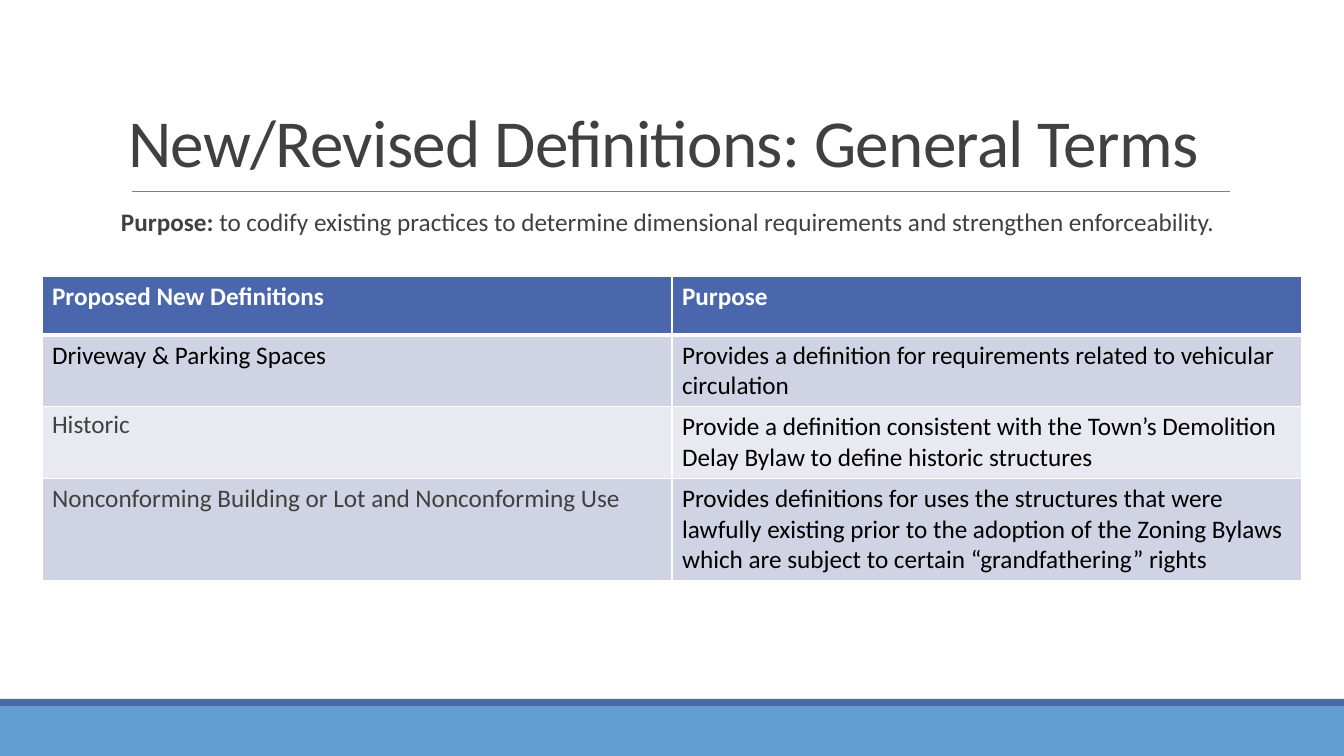
from lxml.etree import SubElement
from pptx import Presentation
from pptx.dml.color import RGBColor
from pptx.enum.shapes import MSO_CONNECTOR, MSO_SHAPE
from pptx.enum.text import MSO_ANCHOR, MSO_AUTO_SIZE, PP_ALIGN
from pptx.oxml.ns import qn
from pptx.util import Pt

TITLE = "New/Revised Definitions: General Terms"
PURPOSE = [
    ("Purpose: ", True),
    ("to codify existing practices to determine dimensional requirements "
     "and strengthen enforceability.", False),
]
DEFINITIONS = [
    ("Proposed New Definitions", "Purpose"),
    ("Driveway & Parking Spaces",
     "Provides a definition for requirements related to vehicular circulation"),
    ("Historic",
     "Provide a definition consistent with the Town’s Demolition Delay Bylaw "
     "to define historic structures"),
    ("Nonconforming Building or Lot and Nonconforming Use",
     "Provides definitions for uses the structures that were lawfully existing "
     "prior to the adoption of the Zoning Bylaws which are subject to certain "
     "“grandfathering” rights"),
]
ROW_HEIGHTS = [59, 71, 71, 102]

WHITE = RGBColor(0xFF, 0xFF, 0xFF)
BLACK = RGBColor(0x00, 0x00, 0x00)
CHARCOAL = RGBColor(0x40, 0x40, 0x40)
GRAY = RGBColor(0x80, 0x80, 0x80)
NAVY = RGBColor(0x4A, 0x66, 0xAC)
SKY = RGBColor(0x62, 0x9D, 0xD1)
BAND_DARK = RGBColor(0xD0, 0xD3, 0xE3)
BAND_LIGHT = RGBColor(0xE9, 0xEA, 0xF1)
TEXT_COLORS = [(WHITE, WHITE), (BLACK, BLACK), (CHARCOAL, BLACK), (CHARCOAL, BLACK)]
ROW_FILLS = [NAVY, BAND_DARK, BAND_LIGHT, BAND_DARK]

WIDTH, HEIGHT = 1344, 756
SCALE = 12192000 / WIDTH


def px(length):
    return round(length * SCALE)


def place(shape, left, top, width, height):
    shape.left, shape.top = px(left), px(top)
    shape.width, shape.height = px(width), px(height)


def add_run(paragraph, text, size, color, bold=False):
    run = paragraph.add_run()
    run.text = text
    run.font.name = "Calibri"
    run.font.size = Pt(size)
    run.font.bold = bold
    run.font.color.rgb = color
    return run


def add_borders(cell, bottom_width):
    properties = cell._tc.get_or_add_tcPr()
    for side in ("lnL", "lnR", "lnT", "lnB"):
        width = bottom_width if side == "lnB" else 1
        line = SubElement(properties, qn(f"a:{side}"), w=str(Pt(width)))
        SubElement(SubElement(line, qn("a:solidFill")), qn("a:srgbClr"), val=str(WHITE))


def add_band(slide, top, height, color):
    band = slide.shapes.add_shape(MSO_SHAPE.RECTANGLE, 0, px(top), px(WIDTH), px(height))
    band.shadow.inherit = False
    band.fill.solid()
    band.fill.fore_color.rgb = color
    band.line.fill.background()


def add_title(slide):
    title = slide.shapes.title
    place(title, 118, 51, 1109, 135)
    frame = title.text_frame
    frame.auto_size = MSO_AUTO_SIZE.NONE
    frame.vertical_anchor = MSO_ANCHOR.BOTTOM
    paragraph = frame.paragraphs[0]
    paragraph.alignment = PP_ALIGN.LEFT
    paragraph.line_spacing = 0.85
    run = add_run(paragraph, TITLE, 48, CHARCOAL)
    run.font._element.set("spc", "-50")


def add_purpose(slide):
    body = slide.placeholders[1]
    place(body, 121, 205, 1109, 92)
    frame = body.text_frame
    frame.auto_size = MSO_AUTO_SIZE.NONE
    frame.margin_left = frame.margin_right = 0
    paragraph = frame.paragraphs[0]
    paragraph.alignment = PP_ALIGN.JUSTIFY
    paragraph.line_spacing = 0.9
    paragraph.space_before = Pt(0)
    properties = paragraph._p.get_or_add_pPr()
    properties.set("marL", "0")
    properties.set("indent", "0")
    SubElement(properties, qn("a:buNone"))
    for text, bold in PURPOSE:
        add_run(paragraph, text, 18, CHARCOAL, bold)


def add_definitions(slide):
    frame = slide.shapes.add_table(len(DEFINITIONS), 2, px(42), px(276),
                                   px(1260), px(sum(ROW_HEIGHTS)))
    table = frame.table
    for row_index, texts in enumerate(DEFINITIONS):
        table.rows[row_index].height = px(ROW_HEIGHTS[row_index])
        header = row_index == 0
        for column_index, text in enumerate(texts):
            cell = table.cell(row_index, column_index)
            add_borders(cell, 3 if header else 1)
            cell.fill.solid()
            cell.fill.fore_color.rgb = ROW_FILLS[row_index]
            paragraph = cell.text_frame.paragraphs[0]
            add_run(paragraph, text, 18, TEXT_COLORS[row_index][column_index], header)
    historic = table.cell(2, 0).text_frame.paragraphs[0]
    historic.line_spacing = 0.9
    historic.space_before = Pt(12)
    historic.space_after = Pt(2)


def main():
    presentation = Presentation()
    presentation.slide_width, presentation.slide_height = px(WIDTH), px(HEIGHT)
    slide = presentation.slides.add_slide(presentation.slide_layouts[1])
    add_band(slide, 706, 50, SKY)
    add_band(slide, 699, 7, NAVY)
    rule = slide.shapes.add_connector(MSO_CONNECTOR.STRAIGHT,
                                      px(132), px(191), px(1230), px(191))
    rule.line.color.rgb = GRAY
    rule.line.width = Pt(0.5)
    SubElement(rule._element.spPr, qn("a:effectLst"))
    add_title(slide)
    add_purpose(slide)
    add_definitions(slide)
    presentation.save("out.pptx")


if __name__ == "__main__":
    main()
